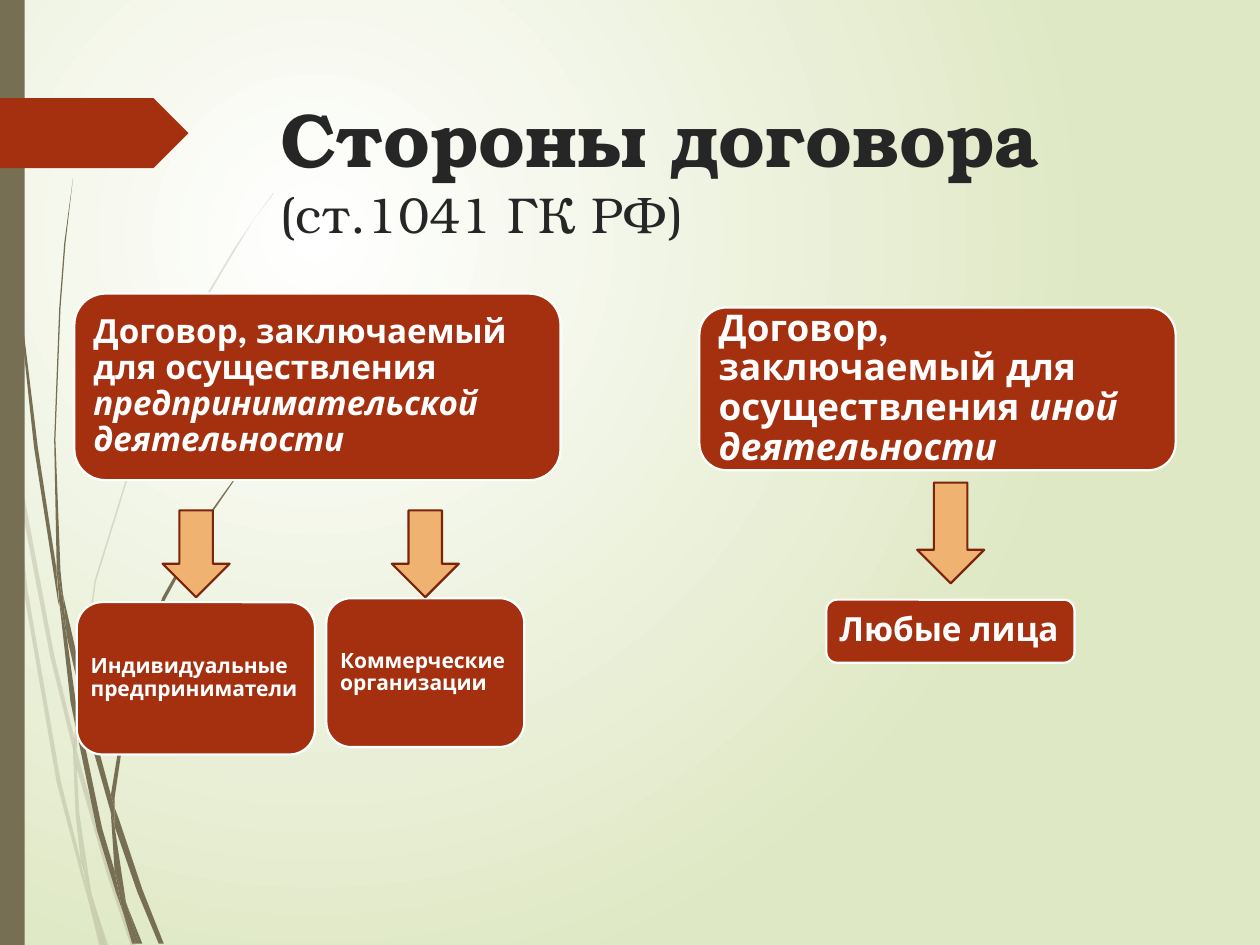
from lxml import etree
from pptx import Presentation, util as u
from pptx.dml.color import RGBColor
from pptx.enum import shapes, text
from pptx.oxml.ns import qn

COLORS = {"olive": "766F54", "red": "A53010", "dark_red": "7A240C", "sand": "F0B270",
          "white": "FFFFFF", "pale_green": "DFE8C4", "ink": "262626"}
TITLE_FONT, BODY_FONT = "TeX Gyre Bonum", "League Spartan"

# (text, size, bold), one per title line
TITLE = [("Стороны договора", 43.2, True), ("(ст.1041 ГК РФ)", 28.8, False)]

# left, top, width, height and inset in cm; size; (text, italic) runs
BOXES = [
    ((1.5, 5.92, 9.8, 3.76), 0.2, 19, [("Договор, заключаемый для осуществления ", False),
                                       ("предпринимательской деятельности", True)]),
    ((14.1, 6.2, 9.6, 3.28), 0.23, 21, [("Договор, заключаемый для осуществления ", False),
                                        ("иной деятельности", True)]),
    ((1.55, 12.14, 4.8, 3.07), 0.13, 12, [("Индивидуальные предприниматели", False)]),
    ((6.58, 12.06, 3.99, 3), 0.13, 12, [("Коммерческие организации", False)]),
    ((16.66, 12.09, 5, 1.27), 0.2, 19, [("Любые лица", False)]),
]
ARROWS = [(7.9, 10.29, 1.35, 1.75), (3.28, 10.29, 1.35, 1.75), (18.49, 9.73, 1.35, 2.03)]

# Grass outlines, on a grid of 100 steps per 2.54 cm
STEP = u.Cm(2.54) / 100
PALE_GRASS = [
    [(8, 350), (6, 322), (0, 282), (0, 299), (7, 344)],
    [(40, 522), (59, 599), (59, 586), (43, 520), (10, 345), (12, 376)],
    [(64, 607), (61, 596), (61, 610), (85, 694), (104, 751), (108, 751), (88, 692)],
    [(83, 751), (86, 751), (73, 711)],
    [(64, 683), (48, 619), (22, 469), (12, 376), (8, 350), (19, 470), (45, 621), (64, 693),
     (70, 714), (69, 707)],
    [(58, 599), (60, 646), (64, 683), (67, 692), (73, 711), (72, 706), (63, 646), (61, 610),
     (61, 608)],
    [(61, 584), (76, 462), (111, 349), (159, 245), (187, 198), (201, 175), (217, 154),
     (217, 153), (201, 175), (186, 197), (158, 244), (110, 348), (75, 461), (59, 584),
     (59, 586), (61, 596)],
    [(70, 714), (79, 751), (82, 751)],
    [(61, 608), (61, 610), (61, 596), (59, 586), (58, 599)],
    [(67, 692), (65, 683), (69, 707), (70, 714), (82, 751), (83, 751), (73, 711)],
]
DARK_GRASS = [
    [(5, 110), (14, 233), (27, 355), (46, 477), (47, 481), (45, 457), (45, 453), (30, 355),
     (15, 232), (6, 109), (4, 48), (3, 0), (2, 0), (3, 48)],
    [(73, 592), (88, 645), (88, 633), (88, 631), (77, 590), (50, 472), (53, 505)],
    [(94, 649), (91, 641), (91, 656), (109, 708), (126, 749), (130, 749), (113, 706)],
    [(91, 691), (81, 657), (60, 556), (53, 505), (47, 477), (56, 557), (77, 659), (92, 708),
     (97, 722), (96, 717)],
    [(50, 472), (48, 453), (44, 349), (48, 245), (52, 193), (58, 141), (51, 193), (47, 245),
     (43, 349), (45, 449), (49, 472)],
    [(110, 749), (113, 749), (101, 719)],
    [(47, 477), (53, 505), (50, 472), (49, 472), (45, 449), (45, 453)],
    [(91, 633), (103, 552), (131, 476), (169, 406), (191, 374), (203, 359), (216, 344),
     (215, 344), (203, 358), (191, 373), (168, 405), (129, 474), (101, 551), (88, 631),
     (91, 641)],
    [(97, 722), (105, 749), (108, 749)],
    [(88, 645), (91, 691), (96, 706), (101, 719), (100, 716), (91, 656), (90, 651)],
    [(88, 645), (90, 651), (91, 656), (91, 641), (88, 631), (88, 633)],
    [(96, 706), (91, 691), (96, 717), (97, 722), (108, 749), (110, 749), (101, 719)],
]


def rgb(name):
    return RGBColor.from_string(COLORS[name])


def paint(sp, fill, line=None):
    sp.shadow.inherit = False
    sp.fill.solid()
    sp.fill.fore_color.rgb = rgb(fill)
    if line:
        sp.line.color.rgb = rgb(line)
        sp.line.width = u.Pt(1.25)
    else:
        sp.line.fill.background()


def add_shape(s, kind, place, fill, line=None):
    sp = s.shapes.add_shape(kind, *map(u.Cm, place))
    paint(sp, fill, line)
    return sp


def add_run(p, words, font, size, color, bold=False, italic=False):
    r = p.add_run()
    r.text = words
    r.font.name, r.font.size = font, u.Pt(size)
    r.font.bold, r.font.italic = bold, italic
    r.font.color.rgb = rgb(color)


def add_background(s):
    """Radial gradient whose bright centre lies in the upper left."""
    fill = s.background.fill
    fill.gradient()
    for stop, color in zip(fill.gradient_stops, ("white", "pale_green")):
        stop.color.rgb = rgb(color)
    grad = s.element.find(".//" + qn("a:gradFill"))
    grad.remove(grad.find(qn("a:lin")))
    circle = etree.SubElement(grad, qn("a:path"), {"path": "circle"})
    etree.SubElement(circle, qn("a:fillToRect"),
                     {"l": "50000", "t": "50000", "r": "100000", "b": "100000"})


def add_grass(s, blades, alpha=100):
    for first, *rest in blades:
        fb = s.shapes.build_freeform(*first, scale=STEP)
        fb.add_line_segments(rest, close=True)
        sp = fb.convert_to_shape()
        paint(sp, "olive")
        if alpha < 100:
            color = sp.fill._xPr.find(".//" + qn("a:srgbClr"))
            etree.SubElement(color, qn("a:alpha"), {"val": str(alpha * 1000)})


def add_title(s):
    tf = s.shapes.add_textbox(*map(u.Cm, (5.41, 1.73, 18.31, 3.56))).text_frame
    tf.word_wrap = True
    p = tf.paragraphs[0]
    for i, (words, size, bold) in enumerate(TITLE):
        if i:
            p.add_line_break()
        add_run(p, words, TITLE_FONT, size, "ink", bold)


def add_box(s, place, inset, size, runs):
    tf = add_shape(s, shapes.MSO_SHAPE.ROUNDED_RECTANGLE, place, "red", "white").text_frame
    tf.word_wrap = True
    tf.vertical_anchor = text.MSO_ANCHOR.MIDDLE
    tf.margin_left = tf.margin_right = tf.margin_top = tf.margin_bottom = u.Cm(inset)
    p = tf.paragraphs[0]
    p.alignment = text.PP_ALIGN.LEFT
    p.line_spacing = 0.9
    for words, italic in runs:
        add_run(p, words, BODY_FONT, size, "white", True, italic)


def main():
    prs = Presentation()
    prs.slide_width, prs.slide_height = u.Cm(25.4), u.Cm(19.05)
    s = prs.slides.add_slide(prs.slide_layouts[6])
    add_background(s)
    add_grass(s, PALE_GRASS, alpha=20)
    add_grass(s, DARK_GRASS)
    add_shape(s, shapes.MSO_SHAPE.RECTANGLE, (0, 0, 0.5, 19.05), "olive")
    add_shape(s, shapes.MSO_SHAPE.PENTAGON, (0, 1.98, 3.8, 1.41), "red")
    add_title(s)
    for box in BOXES:
        add_box(s, *box)
    for place in ARROWS:
        add_shape(s, shapes.MSO_SHAPE.DOWN_ARROW, place, "sand", "dark_red")
    prs.save("out.pptx")


if __name__ == "__main__":
    main()
